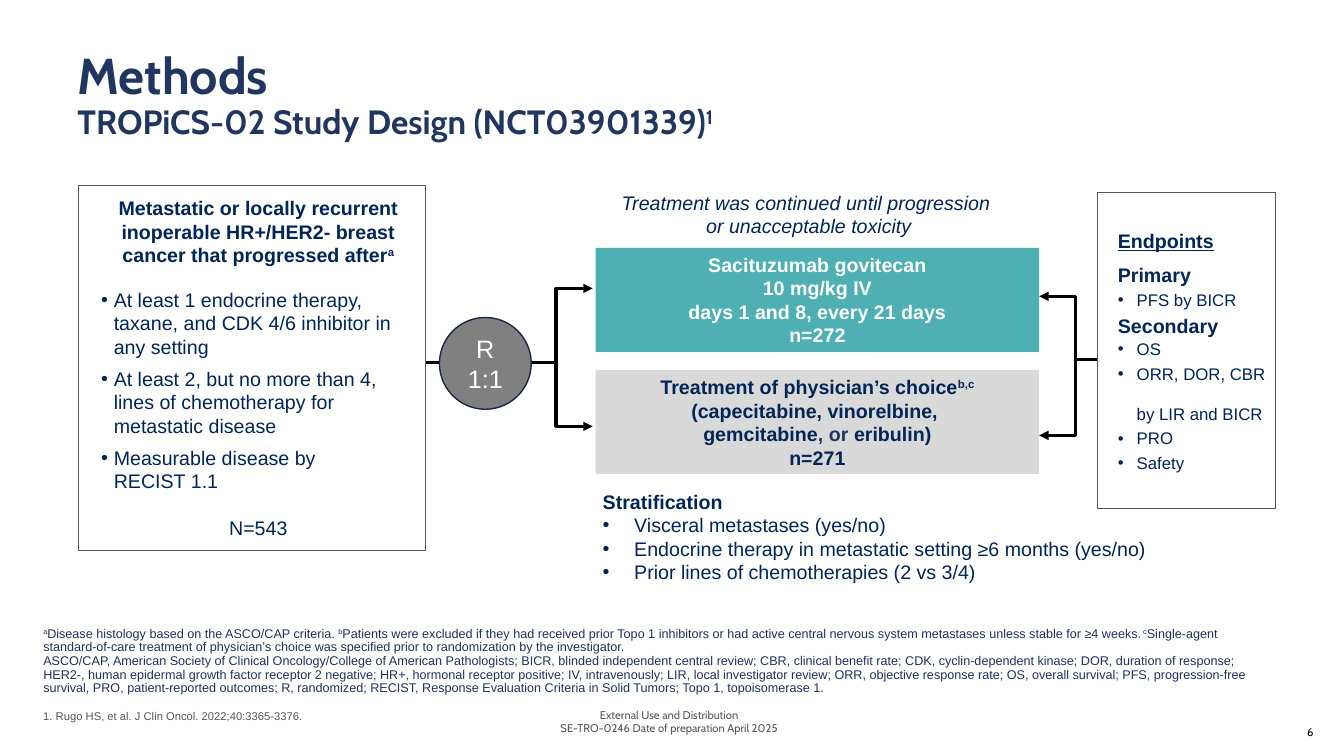
from dataclasses import dataclass
from typing import NamedTuple

from lxml.etree import SubElement
from pptx import Presentation
from pptx.dml.color import RGBColor
from pptx.enum.shapes import MSO_CONNECTOR, MSO_SHAPE
from pptx.enum.text import MSO_ANCHOR, PP_ALIGN
from pptx.oxml.ns import qn
from pptx.util import Pt


@dataclass(frozen=True)
class Theme:
    heading_font: str = "Cabin"
    body_font: str = "Arial"
    heading: str = "203661"
    body: str = "002557"
    footnote: str = "1E325F"
    muted: str = "54565B"
    black: str = "000000"
    white: str = "FFFFFF"
    teal: str = "4EB0B2"
    light_gray: str = "D9D9D9"
    circle_fill: str = "808080"
    circle_line: str = "182848"
    title_size: float = 36
    subtitle_size: float = 24
    circle_size: float = 18
    body_size: float = 14
    list_size: float = 12
    footnote_size: float = 9
    small_size: float = 8


class Box(NamedTuple):
    left: float
    top: float
    width: float
    height: float

    def points(self):
        return [Pt(length) for length in self]


THEME = Theme()
BULLET = "•"


def color(value):
    return RGBColor.from_string(value)


def add_text_box(slide, box, anchor=MSO_ANCHOR.TOP):
    frame = slide.shapes.add_textbox(*box.points()).text_frame
    frame.word_wrap = True
    frame.vertical_anchor = anchor
    return frame


def add_panel(slide, box, fill, line=None, line_width=1, preset=MSO_SHAPE.RECTANGLE):
    shape = slide.shapes.add_shape(preset, *box.points())
    shape.shadow.inherit = False
    shape.fill.solid()
    shape.fill.fore_color.rgb = color(fill)
    if line:
        shape.line.color.rgb = color(line)
        shape.line.width = Pt(line_width)
    else:
        shape.line.fill.background()
    frame = shape.text_frame
    frame.word_wrap = True
    frame.vertical_anchor = MSO_ANCHOR.MIDDLE
    return frame


def write(frame, text, size=THEME.body_size, ink=THEME.body, font=THEME.body_font,
          bold=False, italic=False, align=PP_ALIGN.LEFT, margin=0, hanging=0,
          before=0, after=0, spacing=1.0):
    """Add a paragraph; bars enclose superscripts, newlines become line breaks."""
    paragraph = frame.paragraphs[0]
    if paragraph.runs:
        paragraph = frame.add_paragraph()
    properties = paragraph._p.get_or_add_pPr()
    properties.set("marL", str(Pt(margin)))
    properties.set("indent", str(Pt(-hanging)))
    if hanging:
        SubElement(properties, qn("a:buFont")).set("typeface", THEME.body_font)
        SubElement(properties, qn("a:buChar")).set("char", BULLET)
    paragraph.alignment = align
    paragraph.line_spacing = spacing
    paragraph.space_before, paragraph.space_after = Pt(before), Pt(after)
    paragraph.font.name, paragraph.font.size = font, Pt(size)
    paragraph.font.bold, paragraph.font.italic = bold, italic
    paragraph.font.color.rgb = color(ink)
    for index, part in enumerate(text.split("|")):
        for line_index, line in enumerate(part.split("\n")):
            if line_index:
                paragraph.add_line_break()
            if line:
                run = paragraph.add_run()
                run.text = line
                if index % 2:
                    run._r.get_or_add_rPr().set("baseline", "30000")
    return paragraph


def add_branch(slide, start, ends, bend):
    """Elbow arrows from one start point to each end point."""
    for end in ends:
        connector = slide.shapes.add_connector(
            MSO_CONNECTOR.ELBOW, *[Pt(length) for length in (*start, *end)])
        connector.line.color.rgb = color(THEME.black)
        connector.line.width = Pt(2.25)
        SubElement(connector.line._get_or_add_ln(), qn("a:tailEnd")).set("type", "triangle")
        properties = connector._element.spPr
        SubElement(properties, qn("a:effectLst"))
        guide = SubElement(properties.find(qn("a:prstGeom")).find(qn("a:avLst")), qn("a:gd"))
        guide.set("name", "adj1")
        guide.set("fmla", f"val {round(bend * 100000)}")


def add_title(slide, box):
    frame = add_text_box(slide, box, MSO_ANCHOR.BOTTOM)
    for text, size in (("Methods", THEME.title_size),
                       ("TROPiCS-02 Study Design (NCT03901339)|1|", THEME.subtitle_size)):
        write(frame, text, size, THEME.heading, THEME.heading_font, bold=True, spacing=0.9)


def add_population(slide, box):
    frame = add_panel(slide, box, THEME.white, THEME.muted)
    write(frame, "Metastatic or locally recurrent inoperable HR+/HER2- breast cancer "
          "that progressed after|a|", bold=True, align=PP_ALIGN.CENTER, margin=9, before=6)
    criteria = ("At least 1 endocrine therapy, taxane, and CDK 4/6 inhibitor in any setting",
                "At least 2, but no more than 4, lines of chemotherapy for metastatic disease",
                "Measurable disease by \nRECIST 1.1")
    for index, criterion in enumerate(criteria):
        write(frame, criterion, margin=18, hanging=9, before=6 if index else 15)
    write(frame, "N=543", align=PP_ALIGN.CENTER, margin=9, before=17)


def add_randomization(slide, box):
    frame = add_panel(slide, box, THEME.circle_fill, THEME.circle_line, preset=MSO_SHAPE.OVAL)
    write(frame, "R\n1:1", THEME.circle_size, THEME.white, align=PP_ALIGN.CENTER)


def add_arms(slide, box):
    # Duration note above the arms
    note = add_text_box(slide, Box(box.left - 54, box.top - 44.6, 412.6, 41))
    write(note, "Treatment was continued until progression \nor unacceptable toxicity",
          italic=True, align=PP_ALIGN.CENTER)
    # Two treatment arms
    height, gap = 74.2, 13
    arms = ((THEME.teal, THEME.white,
             ("Sacituzumab govitecan", "10 mg/kg IV", "days 1 and 8, every 21 days", "n=272")),
            (THEME.light_gray, THEME.body,
             ("Treatment of physician’s choice|b,c|",
              "(capecitabine, vinorelbine, \ngemcitabine", "n=271")))
    for index, (fill, ink, lines) in enumerate(arms):
        top = box.top + index * (height + gap)
        frame = add_panel(slide, Box(box.left, top, box.width, height), fill)
        for line in lines:
            paragraph = write(frame, line, ink=ink, bold=True, align=PP_ALIGN.CENTER)
            if line.endswith("gemcitabine"):
                for text, run_ink in ((", or ", THEME.heading), ("eribulin)", ink)):
                    run = paragraph.add_run()
                    run.text = text
                    run.font.color.rgb = color(run_ink)


def add_stratification(slide, box):
    frame = add_text_box(slide, box)
    write(frame, "Stratification", bold=True)
    for factor in ("Visceral metastases (yes/no)",
                   "Endocrine therapy in metastatic setting ≥6 months (yes/no)",
                   "Prior lines of chemotherapies (2 vs 3/4)"):
        write(frame, factor, margin=22.5, hanging=22.5)


def add_endpoints(slide, box):
    frame = add_panel(slide, box, THEME.white, THEME.muted, 0.75)
    frame.margin_left = Pt(14.4)
    write(frame, "Endpoints", bold=True, before=1.4, after=6).font.underline = True
    groups = (("Primary", ("PFS by BICR",), 1.2),
              ("Secondary", ("OS", "ORR, DOR, CBR \nby LIR and BICR", "PRO", "Safety"), 3))
    for heading, endpoints, after in groups:
        write(frame, heading, bold=True, before=1.4, after=1.4)
        for endpoint in endpoints:
            write(frame, endpoint, THEME.list_size, margin=13.5, hanging=13.5,
                  before=1.2 if heading == "Primary" else 0, after=after)


def add_footnotes(slide, box):
    frame = add_text_box(slide, box, MSO_ANCHOR.BOTTOM)
    notes = ("|a|Disease histology based on the ASCO/CAP criteria. |b|Patients were excluded "
             "if they had received prior Topo 1 inhibitors or had active central nervous system "
             "metastases unless stable for ≥4 weeks.| c|Single-agent \nstandard-of-care treatment "
             "of physician’s choice was specified prior to randomization by the investigator.")
    abbreviations = (
        "ASCO/CAP, American Society of Clinical Oncology/College of American Pathologists; "
        "BICR, blinded independent central review; CBR, clinical benefit rate; CDK, "
        "cyclin-dependent kinase; DOR, duration of response; \nHER2-, human epidermal growth "
        "factor receptor 2 negative; HR+, hormonal receptor positive; IV, intravenously; LIR, "
        "local investigator review; ORR, objective response rate; OS, overall survival; PFS, "
        "progression-free survival, PRO, patient-reported outcomes; R, randomized; RECIST, "
        "Response Evaluation Criteria in Solid Tumors; Topo 1, topoisomerase 1.")
    for text in (notes, abbreviations):
        write(frame, text, THEME.footnote_size, THEME.footnote, spacing=0.9)


def add_footer(slide, box):
    reference = add_text_box(slide, Box(box.left, box.top, box.width, 17.3))
    write(reference, "1. Rugo HS, et al. J Clin Oncol. 2022;40:3365-3376.",
          THEME.small_size, THEME.muted)
    notice = add_text_box(slide, Box(box.left + 346.3, box.top + 0.7, 216, 23), MSO_ANCHOR.MIDDLE)
    for line in ("External Use and Distribution", "SE-TRO-0246 Date of preparation April 2025"):
        write(notice, line, THEME.small_size, THEME.muted, THEME.heading_font,
              align=PP_ALIGN.CENTER)
    number = add_text_box(slide, Box(box.left + 697.6, box.top + 5, 224, 28.8), MSO_ANCHOR.MIDDLE)
    write(number, "6", THEME.small_size, THEME.black, THEME.heading_font, align=PP_ALIGN.RIGHT)


def main():
    presentation = Presentation()
    presentation.slide_width, presentation.slide_height = Pt(960), Pt(540)
    slide = presentation.slides.add_slide(presentation.slide_layouts[6])
    add_title(slide, Box(48.2, 28.8, 860.4, 76.3))
    # Arrows lie behind the panels
    add_branch(slide, (300.2, 259.2), ((423.4, 206), (423.4, 304.6)), 0.787)
    add_branch(slide, (865.4, 257), ((742.3, 311), (742.3, 211.7)), 0.787)
    add_population(slide, Box(56.2, 132.5, 247.7, 260.6))
    add_randomization(slide, Box(313.9, 226.8, 65.5, 65.5))
    add_arms(slide, Box(425.5, 177.1, 316.8, 161.4))
    add_stratification(slide, Box(423.4, 346.3, 473.8, 79.9))
    add_endpoints(slide, Box(784.1, 137.5, 127.4, 226.1))
    add_footnotes(slide, Box(23.8, 461.5, 901.4, 38.9))
    add_footer(slide, Box(23.8, 503.3, 943.2, 33.8))
    presentation.save("out.pptx")


if __name__ == "__main__":
    main()
